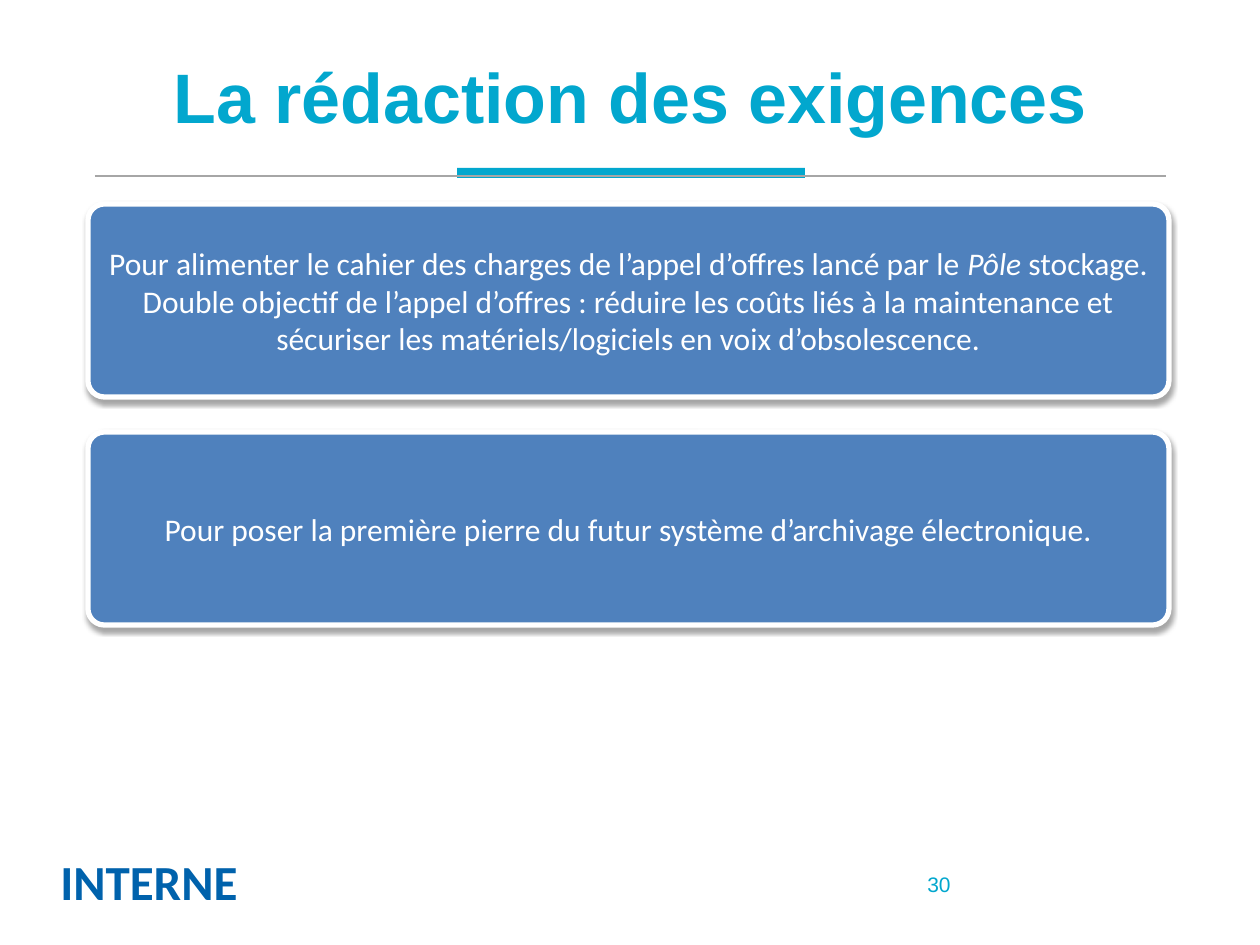
from lxml import etree
from pptx import Presentation
from pptx.dml.color import RGBColor
from pptx.enum.shapes import MSO_CONNECTOR, MSO_SHAPE
from pptx.enum.text import MSO_ANCHOR, MSO_AUTO_SIZE, PP_ALIGN
from pptx.oxml.ns import qn
from pptx.util import Emu, Pt

LEFT, CENTER, RIGHT = PP_ALIGN.LEFT, PP_ALIGN.CENTER, PP_ALIGN.RIGHT
TOP, MIDDLE = MSO_ANCHOR.TOP, MSO_ANCHOR.MIDDLE

# Content: each box is a list of paragraphs, each a list of (text, italic) runs
TITLE = "La rédaction des exigences"
LABEL = "INTERNE"
NUMBER = "30"
BOXES = [
    [
        [("Pour alimenter le cahier des charges de l’appel d’offres lancé par le ", False),
         ("Pôle ", True), ("stockage.", False)],
        [("Double objectif de l’appel d’offres : réduire les coûts liés à la maintenance "
          "et sécuriser les matériels/logiciels en voix d’obsolescence.", False)],
    ],
    [[("Pour poser la première pierre du futur système d’archivage électronique.", False)]],
]

# Style and layout, in px
COLORS = {"accent": "02A7CE", "rule": "A6A6A6", "label": "0062AC",
          "box": "4F81BD", "white": "FFFFFF", "shadow": "000000"}
PX = 914400 / 126
BOX_X, BOX_Y, BOX_W, BOX_H, BOX_GAP = 88, 204, 1081, 193, 35


def px(*values):
    return [Emu(round(v * PX)) for v in values]


def color(name):
    return RGBColor.from_string(COLORS[name])


def style_run(r, font, size, name, bold=False, italic=False):
    r.font.name, r.font.size = font, Pt(size)
    r.font.bold, r.font.italic = bold, italic
    r.font.color.rgb = color(name)


def set_line(sp, text, align, anchor, *style, **flags):
    tf = sp.text_frame
    tf.text = text
    tf.vertical_anchor = anchor
    p = tf.paragraphs[0]
    p.alignment = align
    style_run(p.runs[0], *style, **flags)
    return tf


def add_soft_shadow(sp):
    effects = sp._element.spPr.find(qn("a:effectLst"))
    shadow = etree.SubElement(effects, qn("a:outerShdw"), blurRad=str(Pt(3.1)),
                              dist=str(Pt(1.8)), dir="5400000", rotWithShape="0")
    clr = etree.SubElement(shadow, qn("a:srgbClr"), val=COLORS["shadow"])
    etree.SubElement(clr, qn("a:alpha"), val="35000")


def add_filled(s, kind, fill, *box):
    sp = s.shapes.add_shape(kind, *px(*box))
    sp.shadow.inherit = False
    sp.fill.solid()
    sp.fill.fore_color.rgb = color(fill)
    sp.line.fill.background()
    return sp


def add_box(s, top, paragraphs):
    sp = add_filled(s, MSO_SHAPE.ROUNDED_RECTANGLE, "box", BOX_X, top, BOX_W, BOX_H)
    sp.adjustments[0] = 0.085
    sp.line.color.rgb = color("white")
    sp.line.width = Pt(3)
    add_soft_shadow(sp)
    tf = sp.text_frame
    tf.word_wrap = True
    tf.vertical_anchor = MIDDLE
    for i, runs in enumerate(paragraphs):
        p = tf.add_paragraph() if i else tf.paragraphs[0]
        p.alignment = CENTER
        for text, italic in runs:
            r = p.add_run()
            r.text = text
            style_run(r, "Calibri", 18, "white", italic=italic)


def main():
    prs = Presentation()
    prs.slide_width, prs.slide_height = px(1260, 945)
    s = prs.slides.add_slide(prs.slide_layouts[5])

    # Title
    title = s.shapes.title
    title.left, title.top, title.width, title.height = px(63, 16, 1134, 158)
    set_line(title, TITLE, CENTER, MIDDLE, "Arial", 40, "accent", bold=True)

    # Accent bar and rule under the title
    add_filled(s, MSO_SHAPE.RECTANGLE, "accent", 457, 168, 348, 10)
    rule = s.shapes.add_connector(MSO_CONNECTOR.STRAIGHT, *px(95, 176, 1166, 176))
    rule.line.color.rgb = color("rule")
    rule.line.width = Pt(0.75)
    etree.SubElement(rule._element.spPr, qn("a:effectLst"))

    # Message boxes
    for i, paragraphs in enumerate(BOXES):
        add_box(s, BOX_Y + i * (BOX_H + BOX_GAP), paragraphs)

    # Footer: classification label and slide number
    label = s.shapes.add_textbox(*px(48, 845, 204, 72))
    tf = set_line(label, LABEL, LEFT, TOP, "Calibri", 28, "label", bold=True)
    tf.word_wrap = False
    tf.auto_size = MSO_AUTO_SIZE.SHAPE_TO_FIT_TEXT
    number = s.shapes.add_textbox(*px(669, 859, 294, 50))
    set_line(number, NUMBER, RIGHT, MIDDLE, "Arial", 12, "accent").word_wrap = True

    prs.save("out.pptx")


if __name__ == "__main__":
    main()
